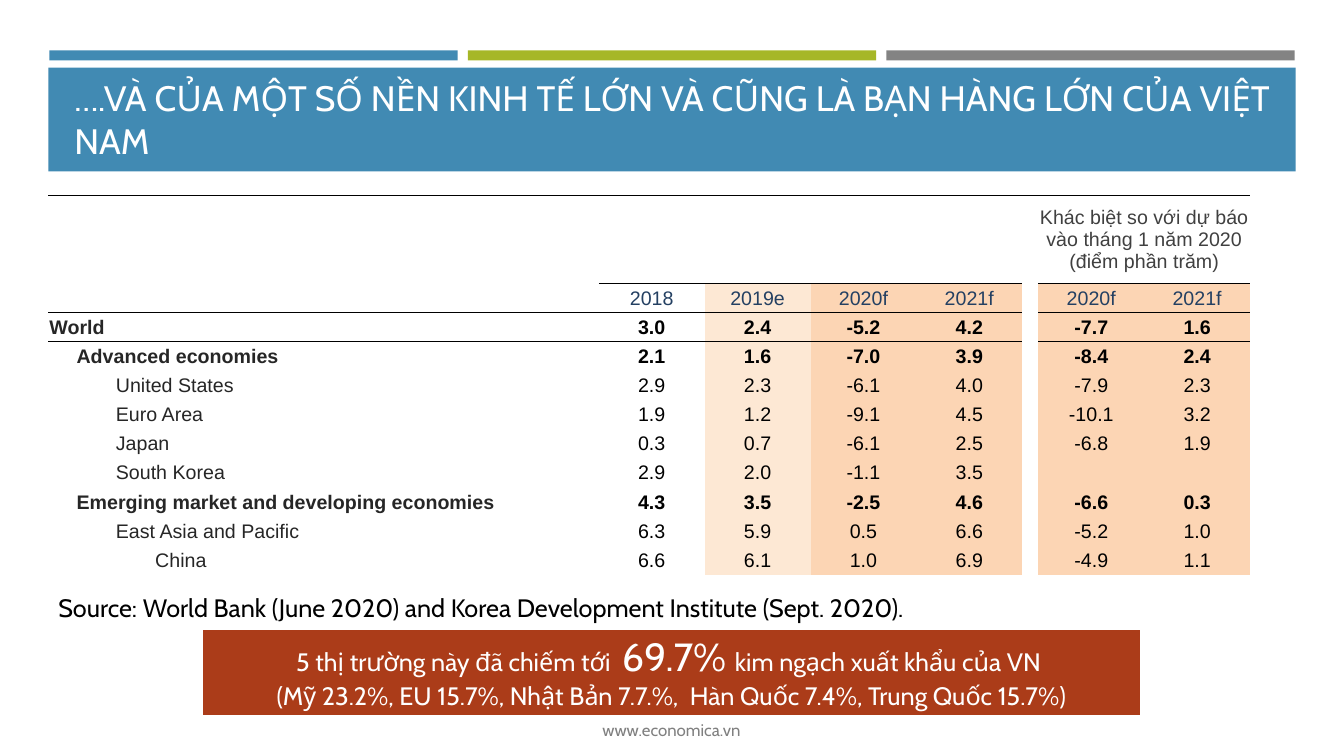
from lxml.etree import SubElement
from pptx import Presentation
from pptx.dml.color import RGBColor
from pptx.enum.shapes import MSO_SHAPE as SHAPE
from pptx.enum.text import MSO_ANCHOR as ANCHOR, PP_ALIGN as ALIGN
from pptx.oxml.ns import qn
from pptx.util import Inches, Pt

BLUE, GREEN, GRAY, RED = "418AB3", "A6B727", "838383", "AB3C19"
WHITE, BLACK, LABEL, HEADER = "FFFFFF", "000000", "262626", "244062"
CREAM, PEACH = "FDE8D4", "FCD5B4"
NO_STYLE = "{2D5ABB26-0587-4C30-8999-92F81FD0307C}"

COL_WIDTHS = [0.27, 0.39, 0.39, 0.16, 4.25] + [1.05] * 4 + [0.16] + [1.05] * 2
ROW_HEIGHTS = [0.87] + [0.289] * 10
VALUE_FILLS = {5: WHITE, 6: CREAM, 7: PEACH, 8: PEACH, 10: PEACH, 11: PEACH}
LAST_LABEL_COL, GAP_COL = 4, 9
YEARS = ["2018", "2019e", "2020f", "2021f", "2020f", "2021f"]
ROWS = [
    ("World", 0, True, "3.0 2.4 -5.2 4.2 -7.7 1.6"),
    ("Advanced economies", 1, True, "2.1 1.6 -7.0 3.9 -8.4 2.4"),
    ("United States", 2, False, "2.9 2.3 -6.1 4.0 -7.9 2.3"),
    ("Euro Area", 2, False, "1.9 1.2 -9.1 4.5 -10.1 3.2"),
    ("Japan", 2, False, "0.3 0.7 -6.1 2.5 -6.8 1.9"),
    ("South Korea", 2, False, "2.9 2.0 -1.1 3.5"),
    ("Emerging market and developing economies", 1, True, "4.3 3.5 -2.5 4.6 -6.6 0.3"),
    ("East Asia and Pacific", 2, False, "6.3 5.9 0.5 6.6 -5.2 1.0"),
    ("China", 3, False, "6.6 6.1 1.0 6.9 -4.9 1.1"),
]


def color(value):
    return RGBColor.from_string(value)


def add_run(p, text, size, fill, font="Cabin", bold=False):
    r = p.add_run()
    r.text = text
    r.font.size = Pt(size)
    r.font.name = font
    r.font.bold = bold
    r.font.color.rgb = color(fill)


def add_bar(s, x, y, w, h, fill):
    sp = s.shapes.add_shape(SHAPE.RECTANGLE, Inches(x), Inches(y), Inches(w), Inches(h))
    sp.shadow.inherit = False
    sp.fill.solid()
    sp.fill.fore_color.rgb = color(fill)
    sp.line.fill.background()


def add_text(s, x, y, w, h, text, size, fill, align=ALIGN.LEFT, anchor=ANCHOR.TOP):
    tf = s.shapes.add_textbox(Inches(x), Inches(y), Inches(w), Inches(h)).text_frame
    tf.word_wrap = True
    tf.vertical_anchor = anchor
    p = tf.paragraphs[0]
    p.alignment = align
    add_run(p, text, size, fill)


def add_table(s, x, y, col_widths, row_heights):
    table = s.shapes.add_table(
        len(row_heights), len(col_widths), Inches(x), Inches(y),
        Inches(sum(col_widths)), Inches(sum(row_heights))).table
    table.first_row = table.horz_banding = False
    table._tbl.tblPr.find(qn("a:tableStyleId")).text = NO_STYLE
    for col, width in zip(table.columns, col_widths):
        col.width = Inches(width)
    for row, height in zip(table.rows, row_heights):
        row.height = Inches(height)
    return table


def add_border(cell, side, fill, width):
    tcPr = cell._tc.get_or_add_tcPr()
    ln = SubElement(tcPr, qn("a:ln" + side), w=str(Pt(width)))
    SubElement(SubElement(ln, qn("a:solidFill")), qn("a:srgbClr"), val=fill)


def fill_cell(cell, fill):
    if fill:
        cell.fill.solid()
        cell.fill.fore_color.rgb = color(fill)
    else:
        cell.fill.background()


def format_cell(cell, row, col):
    cell.margin_left = cell.margin_right = cell.margin_top = Inches(0.01)
    cell.margin_bottom = 0
    cell.vertical_anchor = ANCHOR.MIDDLE
    if row == 0 or row == 2 and col != GAP_COL:
        add_border(cell, "T", BLACK, 0.5)
    if row == 0 and col in VALUE_FILLS or row == 1 and col != GAP_COL:
        add_border(cell, "B", BLACK, 0.5)
    fill_cell(cell, VALUE_FILLS.get(col) if row else None)
    SubElement(cell.text_frame.paragraphs[0]._p, qn("a:endParaRPr"), sz="1400")


def write_cell(cell, text, fill, bold=False, align=ALIGN.CENTER):
    p = cell.text_frame.paragraphs[0]
    p.alignment = align
    add_run(p, text, 14, fill, "Arial", bold)


def add_growth_table(s):
    table = add_table(s, 0.48, 1.94, COL_WIDTHS, ROW_HEIGHTS)
    for row in range(len(ROW_HEIGHTS)):
        for col in range(len(COL_WIDTHS)):
            format_cell(table.cell(row, col), row, col)
    table.cell(0, 5).merge(table.cell(0, 7))
    table.cell(0, 10).merge(table.cell(0, 11))
    write_cell(table.cell(0, 10),
               "Khác biệt so với dự báo vào tháng 1 năm 2020 (điểm phần trăm)", "404040")
    for col, year in zip(VALUE_FILLS, YEARS):
        write_cell(table.cell(1, col), year, HEADER)
    for row, (name, level, bold, values) in enumerate(ROWS, 2):
        label = table.cell(row, level)
        label.merge(table.cell(row, LAST_LABEL_COL if level else 1))
        write_cell(label, name, LABEL, bold, ALIGN.LEFT)
        for col, value in zip(VALUE_FILLS, values.split()):
            write_cell(table.cell(row, col), value, BLACK, bold)


def add_export_banner(s):
    cell = add_table(s, 2.01, 6.24, [9.3], [0.85]).cell(0, 0)
    for side, width in (("L", 1), ("R", 1), ("T", 1), ("B", 3)):
        add_border(cell, side, WHITE, width)
    fill_cell(cell, RED)
    p = cell.text_frame.paragraphs[0]
    p.alignment = ALIGN.CENTER
    add_run(p, "5 thị trường này đã chiếm tới  ", 18, WHITE)
    add_run(p, "69.7% ", 28, WHITE)
    add_run(p, "kim ngạch xuất khẩu của VN ", 18, WHITE)
    p.add_line_break()
    add_run(p, "(Mỹ 23.2%, EU 15.7%, Nhật Bản 7.7.%,  Hàn Quốc 7.4%, Trung Quốc 15.7%)", 18, WHITE)


def main():
    prs = Presentation()
    prs.slide_width, prs.slide_height = Inches(13.33), Inches(7.5)
    s = prs.slides.add_slide(prs.slide_layouts[6])
    for i, fill in enumerate((BLUE, GREEN, GRAY)):
        add_bar(s, 0.49 + 4.15 * i, 0.5, 4.05, 0.1, fill)
    add_bar(s, 0.48, 0.67, 12.37, 1.03, BLUE)
    add_text(s, 2.95, 7.09, 7.42, 0.3, "www.economica.vn", 12, "808080", ALIGN.CENTER)
    add_text(s, 0.64, 0.77, 12.24, 0.88,
             "….VÀ CỦA MỘT SỐ NỀN KINH TẾ LỚN VÀ CŨNG LÀ BẠN HÀNG LỚN CỦA VIỆT NAM",
             25.2, WHITE, anchor=ANCHOR.BOTTOM)
    add_growth_table(s)
    add_export_banner(s)
    add_text(s, 0.48, 5.83, 12.24, 0.4,
             "Source: World Bank (June 2020) and Korea Development Institute (Sept. 2020).",
             18, BLACK)
    prs.save("out.pptx")


if __name__ == "__main__":
    main()
